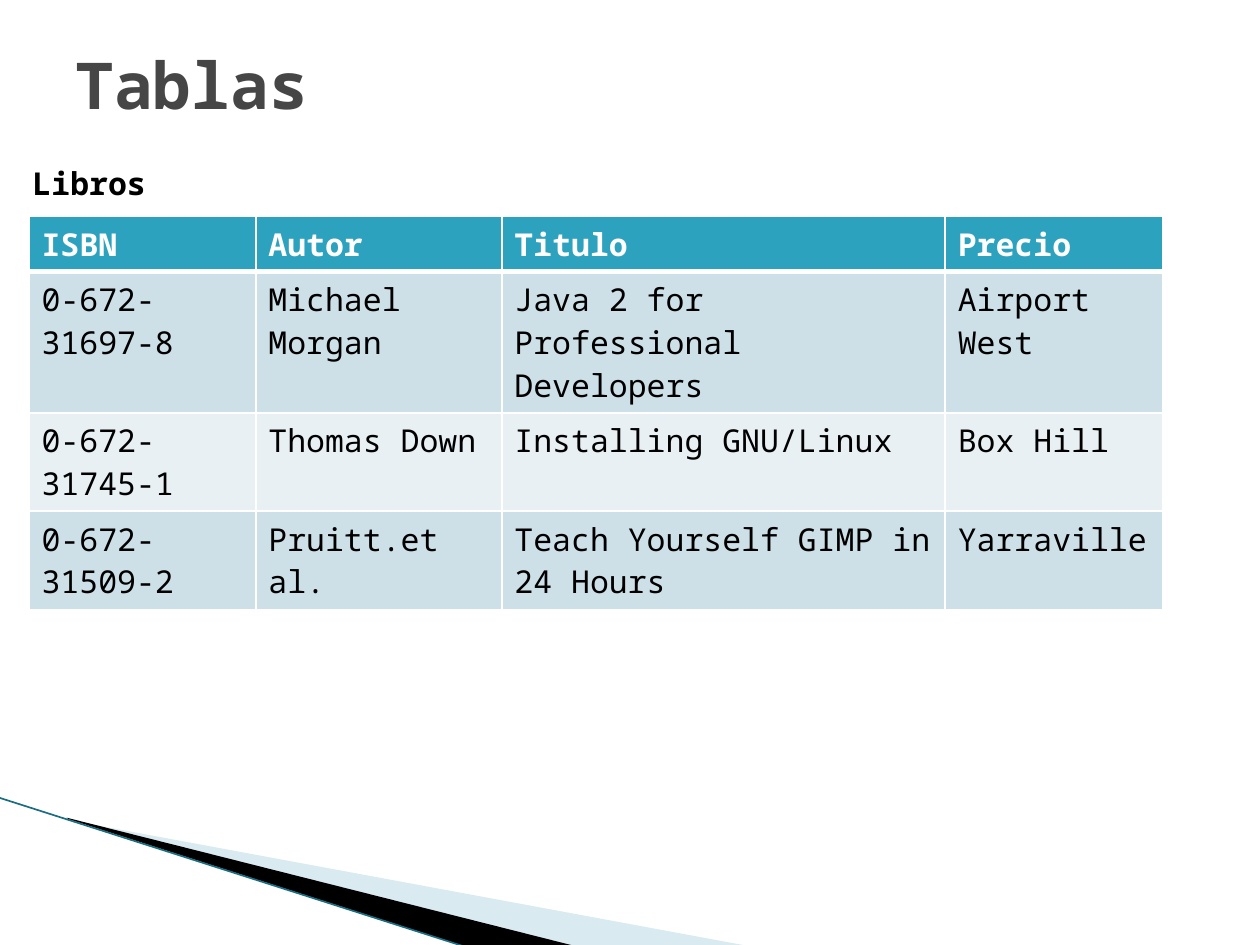
"""Build a slide with a table of books above a decorative corner."""
import lxml.etree
import pptx
import pptx.dml.color
import pptx.enum.shapes
import pptx.enum.text
import pptx.oxml.ns
import pptx.util

RGB = pptx.dml.color.RGBColor
Inches = pptx.util.Inches
Pt = pptx.util.Pt
qn = pptx.oxml.ns.qn

GREY = RGB(0x46, 0x46, 0x46)
BLACK = RGB(0, 0, 0)
WHITE = RGB(0xFF, 0xFF, 0xFF)
HEADER = RGB(0x2D, 0xA2, 0xBF)
BANDS = [RGB(0xCD, 0xE0, 0xE8), RGB(0xE8, 0xF0, 0xF4)]
PALE = RGB(0xA0, 0xCB, 0xDC)
TEAL = RGB(0x1B, 0x6E, 0x82)
FONT = "Noto Sans Mono"

WIDTH, HEIGHT = 10, 7.5
TITLE_BOX = (0.05, 0.04, 0.9, 0.096)
LABEL_BOX = (0.016, 0.167, 0.203, 0.053)
TABLE_BOX = (0.023, 0.229, 0.9, 0.415)
COLUMN_SHARES = [0.2, 0.217, 0.391, 0.192]
ROW_LINES = [1, 3, 2, 2]
LINE_HEIGHT, ROW_PADDING = 0.34, 0.1
BOOKS = [
    ("ISBN", "Autor", "Titulo", "Precio"),
    ("0-672-31697-8", "Michael Morgan", "Java 2 for Professional Developers", "Airport West"),
    ("0-672-31745-1", "Thomas Down", "Installing GNU/Linux", "Box Hill"),
    ("0-672-31509-2", "Pruitt.et al.", "Teach Yourself GIMP in 24 Hours", "Yarraville"),
]
WEDGES = [
    ([(0.55, 6.51), (5.95, 7.51), (4.56, 7.51), (0.55, 6.5)], PALE, 40),
    ([(0.53, 6.49), (4.57, 7.51), (3.72, 7.52), (0.54, 6.5)], BLACK, 100),
]
EDGE = [(-0.01, 6.33), (3.71, 7.52)]


def place(box):
    return [Inches(share * size) for share, size in zip(box, (WIDTH, HEIGHT) * 2)]


def write(tf, text, size=18, color=BLACK, bold=False):
    tf.word_wrap = True
    r = tf.paragraphs[0].add_run()
    r.text = text
    r.font.name = FONT
    r.font.size = Pt(size)
    r.font.bold = bold
    r.font.color.rgb = color


def add_wedge(s, points, color, opacity):
    start, *rest = [(Inches(x), Inches(y)) for x, y in points]
    builder = s.shapes.build_freeform(*start)
    builder.add_line_segments(rest)
    sp = builder.convert_to_shape()
    sp.shadow.inherit = False
    sp.line.fill.background()
    sp.fill.solid()
    sp.fill.fore_color.rgb = color
    if opacity < 100:
        clr = sp.fill._xPr.find(".//" + qn("a:srgbClr"))
        lxml.etree.SubElement(clr, qn("a:alpha"), val=str(opacity * 1000))


def add_edge(s):
    ends = [Inches(v) for point in EDGE for v in point]
    line = s.shapes.add_connector(pptx.enum.shapes.MSO_CONNECTOR.STRAIGHT, *ends)
    line.line.color.rgb = TEAL
    line.line.width = Pt(0.95)
    lxml.etree.SubElement(line._element.spPr, qn("a:effectLst"))


def set_borders(cell, widths):
    tcPr = cell._tc.get_or_add_tcPr()
    for side, width in widths.items():
        ln = lxml.etree.SubElement(tcPr, qn("a:ln" + side), w=str(Pt(width)))
        fill = lxml.etree.SubElement(ln, qn("a:solidFill"))
        lxml.etree.SubElement(fill, qn("a:srgbClr"), val=str(WHITE))


def add_books(s):
    x, y, w, h = place(TABLE_BOX)
    table = s.shapes.add_table(len(BOOKS), len(BOOKS[0]), x, y, w, h).table
    for column, share in zip(table.columns, COLUMN_SHARES):
        column.width = int(w * share)
    for row, lines in zip(table.rows, ROW_LINES):
        row.height = Inches(ROW_PADDING + lines * LINE_HEIGHT)
    for i, book in enumerate(BOOKS):
        head = i == 0
        for j, text in enumerate(book):
            cell = table.cell(i, j)
            set_borders(cell, {"L": 1, "R": 1, "T": 3 if i == 1 else 1, "B": 3 if head else 1})
            cell.fill.solid()
            cell.fill.fore_color.rgb = HEADER if head else BANDS[(i - 1) % 2]
            write(cell.text_frame, text, color=WHITE if head else BLACK, bold=head)


def main():
    prs = pptx.Presentation()
    prs.slide_width, prs.slide_height = Inches(WIDTH), Inches(HEIGHT)
    s = prs.slides.add_slide(prs.slide_layouts[6])
    for wedge in WEDGES:
        add_wedge(s, *wedge)
    add_edge(s)
    title = s.shapes.add_textbox(*place(TITLE_BOX)).text_frame
    title.vertical_anchor = pptx.enum.text.MSO_ANCHOR.MIDDLE
    write(title, "Tablas", size=36.9, color=GREY, bold=True)
    add_books(s)
    label = s.shapes.add_textbox(*place(LABEL_BOX)).text_frame
    write(label, "Libros", bold=True)
    prs.save("out.pptx")


if __name__ == "__main__":
    main()
